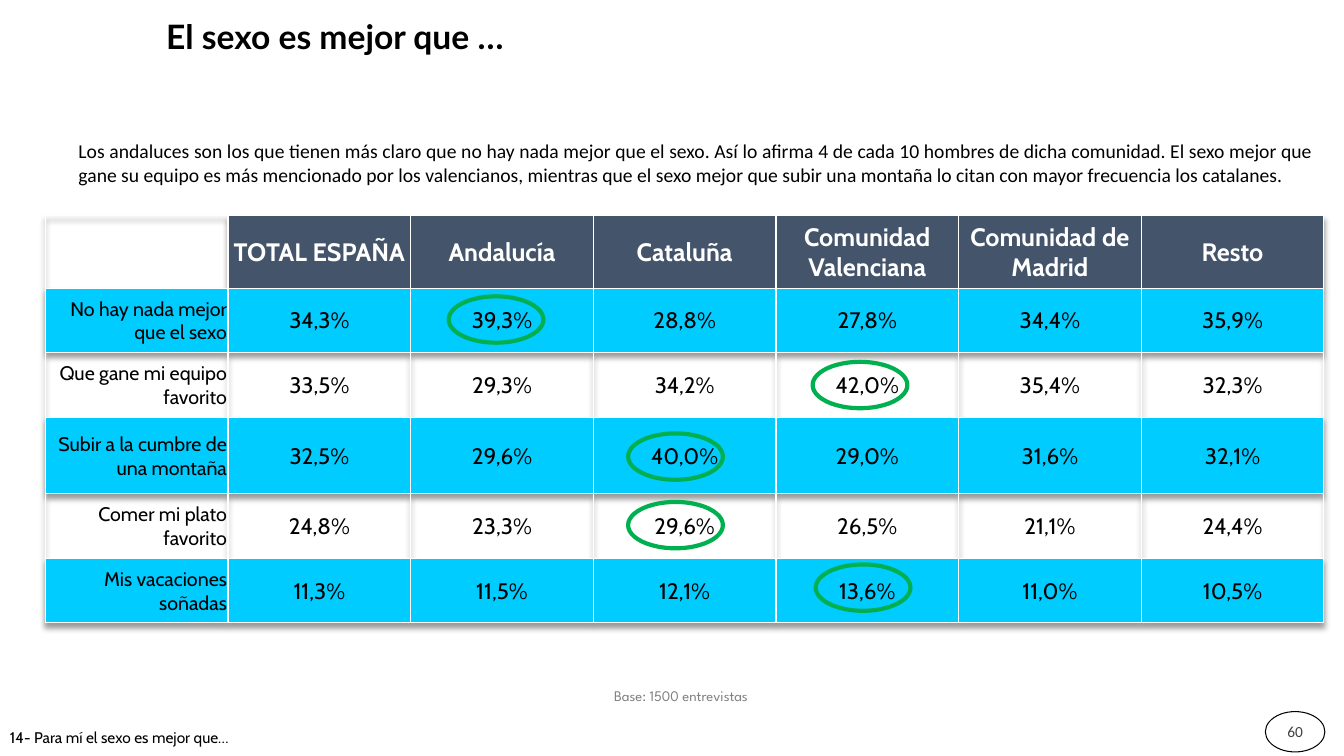
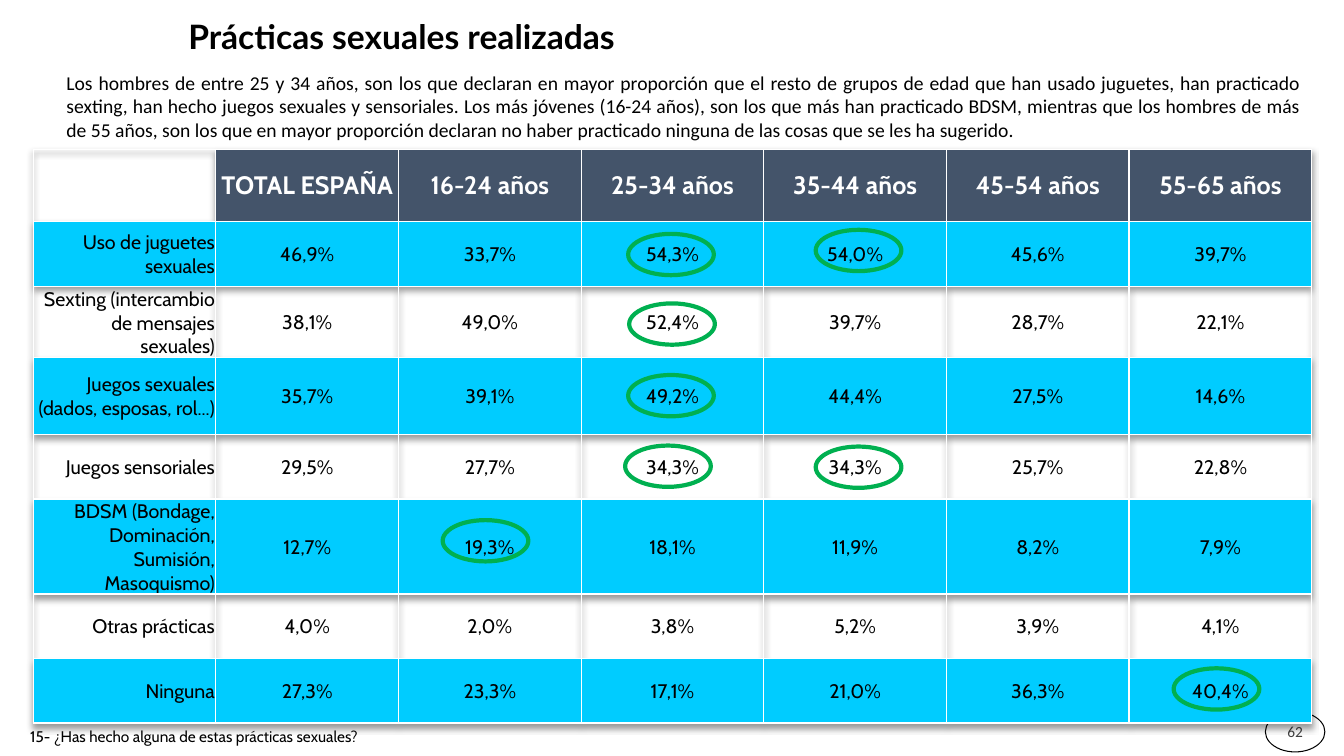
from lxml import etree
from pptx import Presentation
from pptx import util as u
from pptx.dml.color import RGBColor
from pptx.enum import shapes, text
from pptx.oxml import parse_xml
from pptx.oxml.ns import nsdecls, qn

COLORS = {"black": "000000", "white": "FFFFFF", "badge": "404040", "base": "808080",
          "header": "44546A", "band": "00CCFF", "ring": "00B050"}
LEFT, CENTER, RIGHT, JUSTIFY = (text.PP_ALIGN.LEFT, text.PP_ALIGN.CENTER,
                                text.PP_ALIGN.RIGHT, text.PP_ALIGN.JUSTIFY)
MIDDLE, TOP = text.MSO_ANCHOR.MIDDLE, text.MSO_ANCHOR.TOP
COL_WIDTH = 12.68 / 7

SLIDES = [
    {
        "number": "60",
        "title": ("El sexo es mejor que …", 1.55),
        "intro": ("Los andaluces son los que tienen más claro que no hay nada mejor que el sexo. "
                  "Así lo afirma 4 de cada 10 hombres de dicha comunidad. El sexo mejor que gane su "
                  "equipo es más mencionado por los valencianos, mientras que el sexo mejor que subir "
                  "una montaña lo citan con mayor frecuencia los catalanes.", 0.68, 1.33, 0.57),
        "base": "Base: 1500 entrevistas",
        "question": ("14- Para mí el sexo es mejor que…", 0, 7.17),
        "table_at": (0.45, 2.14),
        "value_size": 16,
        "header": ["TOTAL ESPAÑA", "Andalucía", "Cataluña", "Comunidad Valenciana",
                   "Comunidad de Madrid", "Resto"],
        "rows": [
            (0.64, "No hay nada mejor que el sexo", "34,3% 39,3% 28,8% 27,8% 34,4% 35,9%"),
            (0.64, "Que gane mi equipo favorito", "33,5% 29,3% 34,2% 42,0% 35,4% 32,3%"),
            (0.76, "Subir a la cumbre de una montaña", "32,5% 29,6% 40,0% 29,0% 31,6% 32,1%"),
            (0.64, "Comer mi plato favorito", "24,8% 23,3% 29,6% 26,5% 21,1% 24,4%"),
            (0.64, "Mis vacaciones soñadas", "11,3% 11,5% 12,1% 13,6% 11,0% 10,5%"),
        ],
        "ring_size": (0.94, 0.46),
        "rings": [(4.45, 2.94), (6.23, 4.3), (8.06, 3.59), (6.23, 4.98), (8.09, 5.6)],
    },
    {
        "number": "62",
        "title": ("Prácticas sexuales realizadas", 1.77),
        "intro": ("Los hombres de entre 25 y 34 años, son los que declaran en mayor proporción que el "
                  "resto de grupos de edad que han usado juguetes, han practicado sexting, han hecho "
                  "juegos sexuales y sensoriales. Los más jóvenes (16-24 años), son los que más han "
                  "practicado BDSM, mientras que los hombres de más de 55 años, son los que en mayor "
                  "proporción declaran no haber practicado ninguna de las cosas que se les ha "
                  "sugerido.", 0.56, 0.65, 0.81),
        "base": None,
        "question": ("15- ¿Has hecho alguna de estas prácticas sexuales?", 0.2, 7.16),
        "table_at": (0.33, 1.48),
        "value_size": 14,
        "header": ["TOTAL ESPAÑA", "16-24 años", "25-34 años", "35-44 años", "45-54 años",
                   "55-65 años"],
        "rows": [
            (0.64, "Uso de juguetes sexuales", "46,9% 33,7% 54,3% 54,0% 45,6% 39,7%"),
            (0.71, "Sexting (intercambio de mensajes sexuales)",
             "38,1% 49,0% 52,4% 39,7% 28,7% 22,1%"),
            (0.76, "Juegos sexuales (dados, esposas, rol...)",
             "35,7% 39,1% 49,2% 44,4% 27,5% 14,6%"),
            (0.64, "Juegos sensoriales", "29,5% 27,7% 34,3% 34,3% 25,7% 22,8%"),
            (0.94, "BDSM (Bondage, Dominación, Sumisión, Masoquismo)",
             "12,7% 19,3% 18,1% 11,9% 8,2% 7,9%"),
            (0.64, "Otras prácticas", "4,0% 2,0% 3,8% 5,2% 3,9% 4,1%"),
            (0.64, "Ninguna", "27,3% 23,3% 17,1% 21,0% 36,3% 40,4%"),
        ],
        "ring_size": (0.85, 0.41),
        "rings": [(6.23, 2.32), (8.09, 2.28), (6.23, 3.72), (6.24, 3.01), (6.2, 4.42),
                  (8.09, 4.43), (4.39, 5.16), (11.64, 6.63)],
    },
]


def rgb(name):
    """Return the named colour."""
    return RGBColor.from_string(COLORS[name])


def inches(*lengths):
    """Convert several lengths to inches."""
    return [u.Inches(n) for n in lengths]


def write(tf, words, font, size, color, align=LEFT, bold=False):
    """Write one styled paragraph into a text frame."""
    p = tf.paragraphs[0]
    p.text = words
    p.alignment = align
    p.font.name, p.font.size, p.font.bold = font, u.Pt(size), bold
    p.font.color.rgb = rgb(color)


def add_text(s, box, words, *style, anchor=TOP, **options):
    """Place a wrapping text box."""
    tf = s.shapes.add_textbox(*inches(*box)).text_frame
    tf.word_wrap = True
    tf.vertical_anchor = anchor
    write(tf, words, *style, **options)


def add_ellipse(s, box, color, width):
    """Place an outlined ellipse without fill."""
    sp = s.shapes.add_shape(shapes.MSO_SHAPE.OVAL, *inches(*box))
    sp.shadow.inherit = False
    sp.fill.background()
    sp.line.color.rgb = rgb(color)
    sp.line.width = u.Pt(width)
    return sp


def add_badge(s, number):
    """Place the translucent page number badge."""
    sp = add_ellipse(s, (12.55, 7.06, 0.59, 0.4), "black", 0.75)
    sp.fill.solid()
    sp.fill.fore_color.rgb = rgb("white")
    etree.SubElement(sp.fill._xPr.find(".//" + qn("a:srgbClr")), qn("a:alpha"), val="70000")
    tf = sp.text_frame
    tf.margin_left = tf.margin_right = u.Inches(0.02)
    tf.vertical_anchor = MIDDLE
    write(tf, number, "Calibri", 11, "badge", CENTER)


def style_cell(cell, fill):
    """Set the margins, white borders and fill of a cell."""
    cell.margin_left = cell.margin_right = cell.margin_top = u.Inches(0.01)
    cell.margin_bottom = 0
    cell.vertical_anchor = MIDDLE
    tcPr = cell._tc.get_or_add_tcPr()
    for side in ("lnL", "lnR", "lnT", "lnB"):
        tcPr.append(parse_xml(
            f'<a:{side} {nsdecls("a")} w="12700"><a:solidFill>'
            f'<a:srgbClr val="{COLORS["white"]}"/></a:solidFill></a:{side}>'))
    if fill:
        cell.fill.solid()
        cell.fill.fore_color.rgb = rgb(fill)
    else:
        cell.fill.background()


def add_shadow(table):
    """Give the table a soft shadow below it."""
    table._tbl.tblPr.insert(0, parse_xml(
        f'<a:effectLst {nsdecls("a")}><a:outerShdw blurRad="50800" dist="38100" dir="5400000" '
        f'algn="t" rotWithShape="0"><a:srgbClr val="{COLORS["black"]}"><a:alpha val="40000"/>'
        '</a:srgbClr></a:outerShdw></a:effectLst>'))


def add_results(s, at, header, rows, value_size):
    """Place the results table with its top left corner at a point."""
    heights = [0.72] + [height for height, _, _ in rows]
    grid = [[""] + header] + [[label] + values.split() for _, label, values in rows]
    frame = s.shapes.add_table(len(grid), len(grid[0]),
                               *inches(*at, COL_WIDTH * len(grid[0]), sum(heights)))
    table = frame.table
    table.first_row = table.horz_banding = False
    add_shadow(table)
    for col in table.columns:
        col.width = u.Inches(COL_WIDTH)
    for i, (height, words) in enumerate(zip(heights, grid)):
        table.rows[i].height = u.Inches(height)
        for j, word in enumerate(words):
            cell = table.cell(i, j)
            if i == 0:
                style_cell(cell, "header" if j else None)
                style = ("Cabin", 18, "white", CENTER, True)
            else:
                style_cell(cell, "band" if i % 2 else None)
                style = (("Cabin", value_size, "black", CENTER) if j
                         else ("Cabin", 14, "black", RIGHT))
            if word:
                write(cell.text_frame, word, *style)


def build_slide(prs, data):
    """Build one survey slide."""
    s = prs.slides.add_slide(prs.slide_layouts[6])
    add_badge(s, data["number"])
    if data["base"]:
        add_text(s, (5.68, 6.76, 2.15, 0.28), data["base"], "League Spartan", 10.5, "base", CENTER)
    words, x, y, height = data["intro"]
    add_text(s, (x, y, 12.45, height), words, "Calibri", 14, "black", JUSTIFY)
    add_results(s, data["table_at"], data["header"], data["rows"], data["value_size"])
    words, x = data["title"]
    add_text(s, (x, 0.05, 8.26, 0.61), words, "Lato", 24, "black", bold=True, anchor=MIDDLE)
    words, x, y = data["question"]
    add_text(s, (x, y, 7.32, 0.29), words, "Cabin", 11, "black")
    for at in data["rings"]:
        add_ellipse(s, at + data["ring_size"], "ring", 3)


def main():
    """Build and save the presentation."""
    prs = Presentation()
    prs.slide_width, prs.slide_height = inches(13.33, 7.5)
    for data in SLIDES:
        build_slide(prs, data)
    prs.save("out.pptx")


if __name__ == "__main__":
    main()
